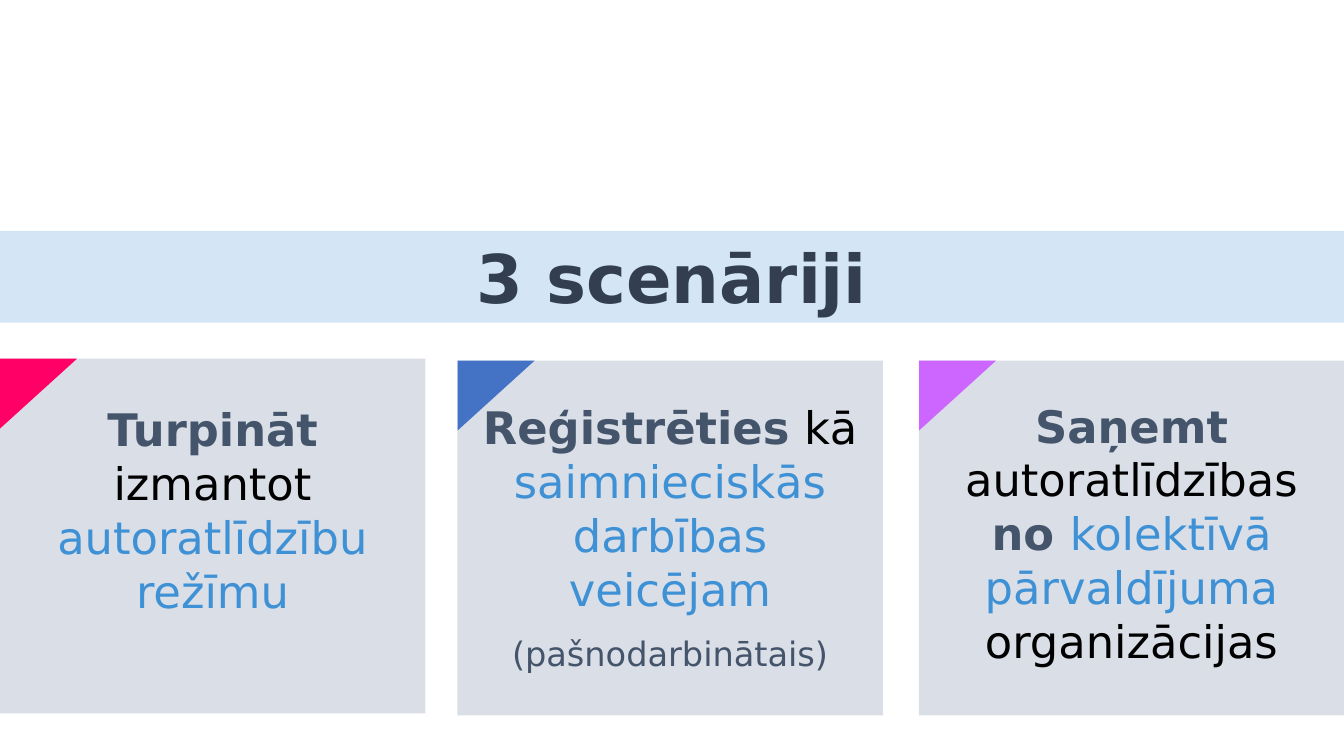
"""Build the slide with three scenarios for receiving author royalties."""
from dataclasses import dataclass

from lxml import etree
from pptx import Presentation
from pptx.dml.color import RGBColor
from pptx.enum import shapes, text
from pptx.oxml import ns
from pptx.util import Cm, Pt


@dataclass(frozen=True)
class Theme:
    font: str = "DejaVu Sans"
    title_size: int = 48
    body_size: int = 32
    note_size: int = 24
    title: str = "333F50"
    strong: str = "44546A"
    plain: str = "000000"
    accent: str = "3F91D5"
    card: str = "D6DCE5"
    corners: tuple = ("FF0066", "4472C4", "CC66FF")


theme = Theme()
STRONG, PLAIN, ACCENT = (theme.strong, True), (theme.plain, False), (theme.accent, False)
NOTE = (theme.strong, False)
SLIDE_WIDTH, CARD_WIDTH, CARD_HEIGHT = 33.87, 10.72, 8.94
CORNER_WIDTH, CORNER_HEIGHT = 1.94, 1.76


def add_filled(kind, left, top, width, height, color, opacity=100):
    shape = slide.shapes.add_shape(kind, Cm(left), Cm(top), Cm(width), Cm(height))
    shape.shadow.inherit = False
    shape.line.fill.background()
    shape.fill.solid()
    shape.fill.fore_color.rgb = RGBColor.from_string(color)
    if opacity < 100:
        tint = shape.fill._xPr.find(".//" + ns.qn("a:srgbClr"))
        etree.SubElement(tint, ns.qn("a:alpha"), val=str(opacity * 1000))
    return shape


def style_paragraph(paragraph, size):
    paragraph.alignment = text.PP_ALIGN.CENTER
    paragraph.font.name = theme.font
    paragraph.font.size = Pt(size)


presentation = Presentation()
presentation.slide_width, presentation.slide_height = Cm(SLIDE_WIDTH), Cm(19.05)
slide = presentation.slides.add_slide(presentation.slide_layouts[6])

banner = add_filled(shapes.MSO_SHAPE.RECTANGLE, 0, 5.82, SLIDE_WIDTH, 2.31, theme.accent, 22)
heading = banner.text_frame.paragraphs[0]
heading.text = "3 scenāriji"
style_paragraph(heading, theme.title_size)
heading.font.bold = True
heading.font.color.rgb = RGBColor.from_string(theme.title)

scenarios = [
    (0, 9.04, 10.01, 5.74, [
        (theme.body_size, 0, [("Turpināt", STRONG)]),
        (theme.body_size, 0, [("izmantot ", PLAIN), ("autoratlīdzību režīmu", ACCENT)]),
    ]),
    (11.53, 9.09, 9.96, 7.21, [
        (theme.body_size, 0, [("Reģistrēties", STRONG), (" kā ", PLAIN),
                              ("saimnieciskās darbības veicējam", ACCENT)]),
        (theme.note_size, 12.6, [("(pašnodarbinātais)", NOTE)]),
    ]),
    (23.16, 9.09, 9.91, 7.09, [
        (theme.body_size, 0, [("Saņemt ", STRONG), ("autoratlīdzības ", PLAIN),
                              ("no ", STRONG), ("kolektīvā pārvaldījuma ", ACCENT),
                              ("organizācijas", PLAIN)]),
    ]),
]

for (left, top, text_top, text_height, paragraphs), corner_color in zip(scenarios, theme.corners):
    add_filled(shapes.MSO_SHAPE.RECTANGLE, left, top, CARD_WIDTH, CARD_HEIGHT, theme.card, 92)

    turn = (CORNER_WIDTH - CORNER_HEIGHT) / 2
    corner = add_filled(shapes.MSO_SHAPE.ISOSCELES_TRIANGLE, left + turn, top - turn,
                        CORNER_HEIGHT, CORNER_WIDTH, corner_color)
    corner.adjustments[0] = 0
    corner.rotation = 90

    description = slide.shapes.add_textbox(Cm(left), Cm(text_top), Cm(CARD_WIDTH), Cm(text_height))
    frame = description.text_frame
    frame.word_wrap = True
    for index, (size, gap, phrases) in enumerate(paragraphs):
        paragraph = frame.add_paragraph() if index else frame.paragraphs[0]
        style_paragraph(paragraph, size)
        if gap:
            paragraph.space_before = Pt(gap)
        for words, (color, bold) in phrases:
            phrase = paragraph.add_run()
            phrase.text = words
            phrase.font.bold = bold
            phrase.font.color.rgb = RGBColor.from_string(color)

presentation.save("out.pptx")
